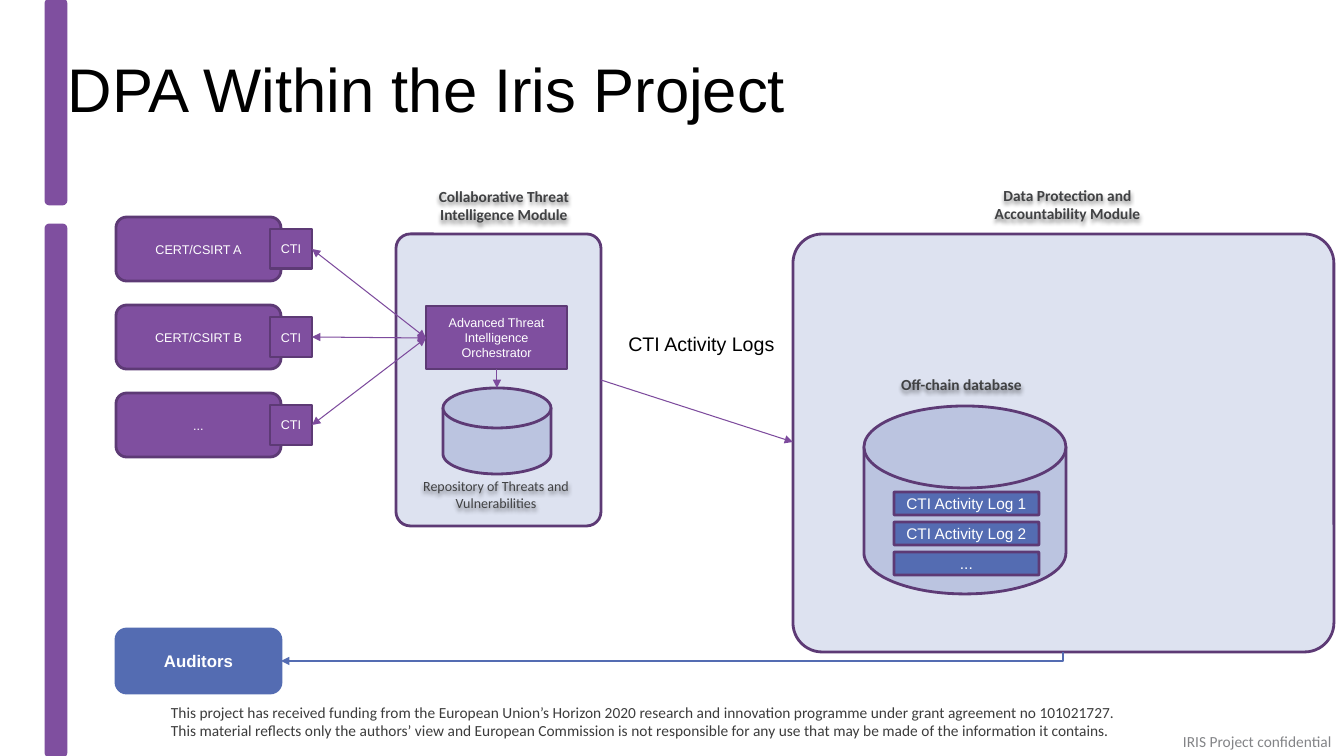
import math
import lxml.etree
import pptx
import pptx.dml.color
import pptx.enum.shapes
import pptx.enum.text
import pptx.oxml.ns
import pptx.util

PX = 914400 / 100.8
PURPLE, EDGE, ARROW, BLUE = "7F4F9F", "5D3A75", "7D4B9D", "546CB2"
PANEL, DRUM, DARK, WHITE = "DDE2F0", "BBC4E0", "414244", "FFFFFF"

# Content: text, place (left, top, width, height), format
TITLE = ("DPA Within the Iris Project", (68, 30, 1210, 126))
FOOTER = ("This project has received funding from the European Union’s Horizon 2020 research and "
          "innovation programme under grant agreement no 101021727. This material reflects only the "
          "authors’ view and European Commission is not responsible for any use that may be made of "
          "the information it contains.", (161, 698, 974, 44))
CONFIDENTIAL = ("IRIS Project confidential", (1173, 727, 171, 28))
LABELS = [
    ("Collaborative Threat Intelligence Module", (403, 191, 202, 29), 11, True),
    ("Data Protection and Accountability Module", (956, 186, 223, 37), 11, True),
    ("Off-chain database", (850, 366, 223, 37), 11, True),
    ("Repository of Threats and Vulnerabilities", (413, 477, 166, 35), 10, False),
]
LOGS_CAPTION = ("CTI Activity Logs", (618, 327, 167, 34))
SIDE_BARS = [(46, 225, 20, 531), (46, 0, 20, 204)]
PANELS = [(396, 234, 205, 292), (793, 234, 541, 418)]
TEAMS = ["CERT/CSIRT A", "CERT/CSIRT B", "..."]
LOGS = ["CTI Activity Log 1", "CTI Activity Log 2", "..."]
ORCHESTRATOR = ("Advanced Threat Intelligence Orchestrator", (426, 306, 141, 63))
AUDITORS = ("Auditors", (116, 629, 165, 64))
DRUMS = [((443, 388, 108, 86), 40), ((864, 406, 202, 188), 82)]

deck = pptx.Presentation()
deck.slide_width, deck.slide_height = round(1344 * PX), round(756 * PX)
page = deck.slides.add_slide(deck.slide_layouts[6])
SHAPES = pptx.enum.shapes.MSO_SHAPE
ANCHORS = pptx.enum.text.MSO_ANCHOR
ALIGNS = pptx.enum.text.PP_ALIGN


def emu(*lengths):
    return [round(length * PX) for length in lengths]


def colour(code):
    return pptx.dml.color.RGBColor.from_string(code)


def add_xml(parent, tag, **attributes):
    child = lxml.etree.SubElement(parent, pptx.oxml.ns.qn(tag))
    for name, value in attributes.items():
        child.set(name, str(value))
    return child


def write(box, text, size, code, font="Arial", bold=False, centred=True, anchor="MIDDLE", **frame):
    settings = {"word_wrap": True, "vertical_anchor": getattr(ANCHORS, anchor), **frame}
    for name, value in settings.items():
        setattr(box.text_frame, name, value)
    para = box.text_frame.paragraphs[0]
    para.alignment = ALIGNS.CENTER if centred else ALIGNS.LEFT
    span = para.add_run()
    span.text = text
    for name, value in {"name": font, "size": pptx.util.Pt(size), "bold": bold}.items():
        setattr(span.font, name, value)
    span.font.color.rgb = colour(code)
    return para


def text_box(place, *args, **options):
    box = page.shapes.add_textbox(*emu(*place))
    return box, write(box, *args, **options)


def paint(shape, fill, line, width=2):
    shape.shadow.inherit = False
    shape.fill.solid()
    shape.fill.fore_color.rgb = colour(fill)
    shape.line.color.rgb = colour(line)
    shape.line.width = pptx.util.Pt(width)
    return shape


def block(kind, place, fill, line, corner=None):
    shape = paint(page.shapes.add_shape(kind, *emu(*place)), fill, line)
    if corner is not None:
        shape.adjustments[0] = corner
    return shape


def drum(place, lid):
    left, top, width, height = place
    middle, radius = left + width / 2, lid / 2
    floor = top + height - radius
    arc = [(middle + width / 2 * math.cos(angle), floor + radius * math.sin(angle))
           for angle in (math.pi * step / 40 for step in range(41))]
    outline = [(left + width, top + radius)] + arc
    builder = page.shapes.build_freeform(*emu(left, top + radius))
    builder.add_line_segments([tuple(emu(*point)) for point in outline], close=True)
    paint(builder.convert_to_shape(), DRUM, EDGE)
    block(SHAPES.OVAL, (left, top, width, lid), DRUM, EDGE)


def arrow(start, end, code=ARROW, both=False, kind="STRAIGHT"):
    connector = page.shapes.add_connector(
        getattr(pptx.enum.shapes.MSO_CONNECTOR, kind), *emu(*start, *end))
    connector.line.color.rgb = colour(code)
    connector.line.width = pptx.util.Pt(0.75)
    line = connector.line._get_or_add_ln()
    if both:
        add_xml(line, "a:headEnd", type="triangle")
    add_xml(line, "a:tailEnd", type="triangle")
    add_xml(connector._element.spPr, "a:effectLst")
    return connector


# Footer and side bars
text_box(FOOTER[1], FOOTER[0], 11, "3C3C3C", "Calibri", centred=False, anchor="TOP")
text_box(CONFIDENTIAL[1], CONFIDENTIAL[0], 11, "838487", "Calibri", centred=False, anchor="TOP")
for place in SIDE_BARS:
    block(SHAPES.ROUNDED_RECTANGLE, place, PURPLE, PURPLE, 0.167)

# Title and module panels
para = text_box(TITLE[1], TITLE[0], 44, "000000", centred=False, margin_left=0,
                margin_right=0, margin_top=0, margin_bottom=0)[1]
para.line_spacing = 0.9
for place in PANELS:
    block(SHAPES.ROUNDED_RECTANGLE, place, PANEL, EDGE, 0.07)

# Auditors
box = block(SHAPES.ROUNDED_RECTANGLE, AUDITORS[1], BLUE, BLUE, 0.167)
write(box, AUDITORS[0], 12, WHITE, bold=True)

# Response teams, each with a CTI tag
for row, team in enumerate(TEAMS):
    box = block(SHAPES.ROUNDED_RECTANGLE, (116, 217 + 88 * row, 165, 64), PURPLE, EDGE, 0.167)
    write(box, team, 9, WHITE)
    tag = block(SHAPES.RECTANGLE, (270, 229 + 88 * row, 42, 40), PURPLE, EDGE)
    write(tag, "CTI", 9, WHITE, margin_left=0, margin_right=0)

# Databases, orchestrator and stored logs
for place, lid in DRUMS:
    drum(place, lid)
write(block(SHAPES.RECTANGLE, ORCHESTRATOR[1], PURPLE, EDGE), ORCHESTRATOR[0], 9, WHITE)
for row, log in enumerate(LOGS):
    box = block(SHAPES.ROUNDED_RECTANGLE, (894, 492 + 30 * row, 145, 23), BLUE, EDGE, 0.04)
    write(box, log, 11, WHITE, margin_top=0, margin_bottom=0)

# Arrows
for row in range(len(TEAMS)):
    arrow((312, 249 + 88 * row), (426, 338), both=True)
arrow((497, 369), (497, 388))
arrow((601, 380), (793, 442))

# Elbow from the accountability module to the auditors, turned a quarter
(right, top), (left, bottom) = (1063, 652), (281, 661)
run, drop = right - left, bottom - top
x, y = (left + right - drop) / 2, (top + bottom - run) / 2
elbow = arrow((x, y), (x + drop, y + run), BLUE, kind="ELBOW")
elbow._element.spPr.find(pptx.oxml.ns.qn("a:xfrm")).set("rot", "5400000")
elbow._element.spPr.find(pptx.oxml.ns.qn("a:prstGeom")).set("prst", "bentConnector2")

# Labels with a soft shadow
for text, place, size, bold in LABELS:
    box = text_box(place, text, size, DARK, "Calibri", bold)[0]
    effects = add_xml(box._element.spPr, "a:effectLst")
    shadow = add_xml(effects, "a:outerShdw", blurRad=38100, dist=25400, dir=5400000, rotWithShape=0)
    add_xml(add_xml(shadow, "a:srgbClr", val="000000"), "a:alpha", val=45000)
text_box(LOGS_CAPTION[1], LOGS_CAPTION[0], 14, "000000", word_wrap=False, anchor="TOP")

deck.save("out.pptx")
